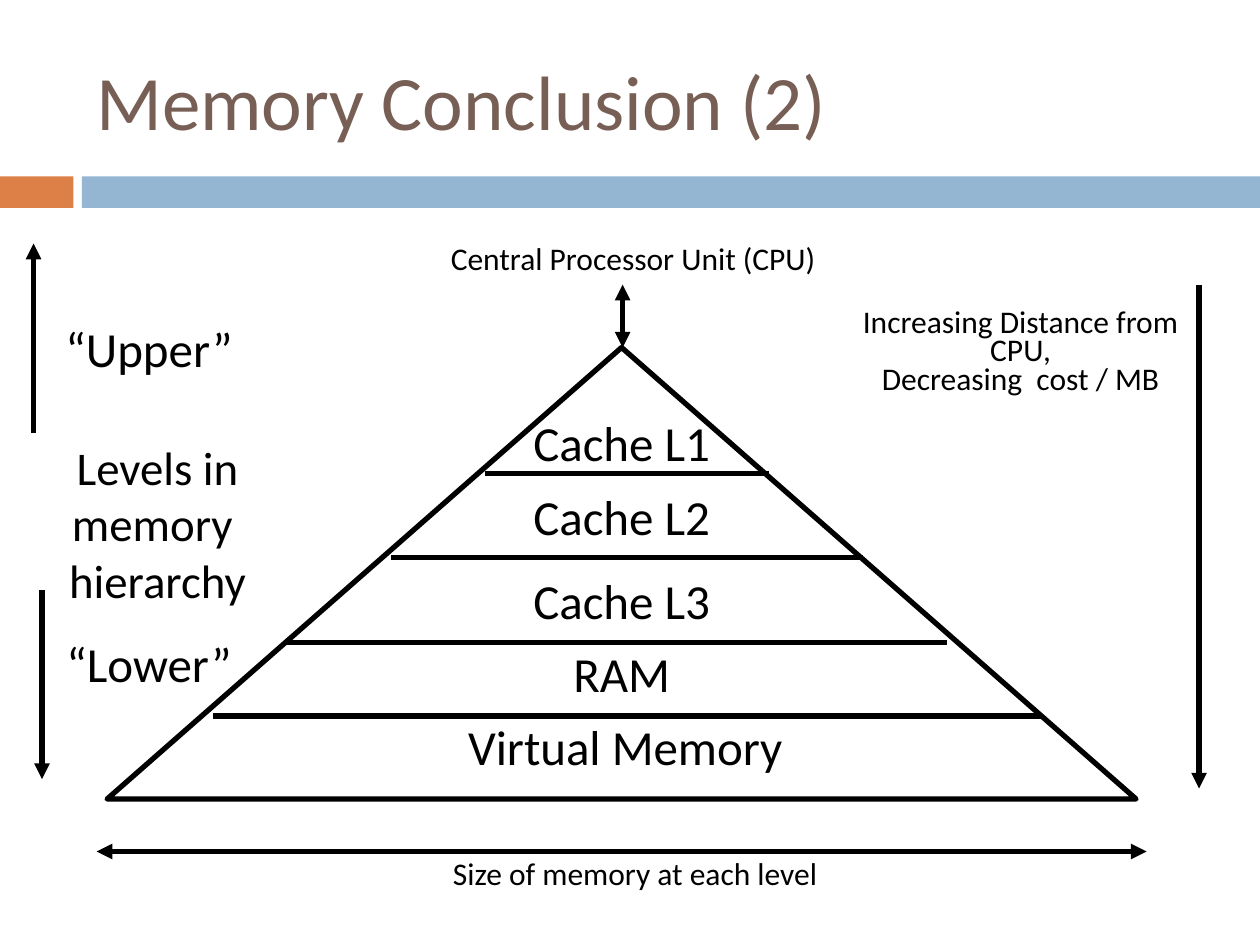
from lxml.etree import SubElement
from pptx import Presentation
from pptx.dml.color import RGBColor
from pptx.enum.shapes import MSO_CONNECTOR, MSO_SHAPE
from pptx.enum.text import MSO_ANCHOR, PP_ALIGN
from pptx.oxml.ns import qn
from pptx.util import Pt

PX = 7620  # 120 px to the inch
BLACK = "000000"


def add_label(place, text, size, color=BLACK, align=PP_ALIGN.CENTER,
              line_spacing=0.75, insets=(8, 4), anchor=MSO_ANCHOR.TOP):
    box = slide.shapes.add_textbox(*[value * PX for value in place])
    frame = box.text_frame
    frame.word_wrap = True
    frame.vertical_anchor = anchor
    frame.margin_left = frame.margin_right = insets[0] * PX
    frame.margin_top = frame.margin_bottom = insets[1] * PX
    paragraph = frame.paragraphs[0]
    paragraph.alignment = align
    paragraph.line_spacing = line_spacing
    for index, line in enumerate(text.split("\n")):
        if index:
            paragraph.add_line_break()
        run = paragraph.add_run()
        run.text = line
        run.font.name = "Calibri"
        run.font.size = Pt(size)
        run.font.color.rgb = RGBColor.from_string(color)


def add_line(start_x, start_y, end_x, end_y, arrowheads=()):
    connector = slide.shapes.add_connector(
        MSO_CONNECTOR.STRAIGHT,
        start_x * PX, start_y * PX, end_x * PX, end_y * PX)
    connector.line.width = Pt(3)
    connector.line.color.rgb = RGBColor.from_string(BLACK)
    properties = connector._element.spPr
    for end in arrowheads:
        SubElement(properties.find(qn("a:ln")), qn(f"a:{end}"), type="triangle")
    SubElement(properties, qn("a:effectLst"))


presentation = Presentation()
presentation.slide_width = 1200 * PX
presentation.slide_height = 900 * PX
slide = presentation.slides.add_slide(presentation.slide_layouts[6])

# Title and the two-coloured band under it
for left, width, color in [(0, 70, "DD8047"), (78, 1122, "94B6D2")]:
    band = slide.shapes.add_shape(
        MSO_SHAPE.RECTANGLE, left * PX, 168 * PX, width * PX, 30 * PX)
    band.shadow.inherit = False
    band.fill.solid()
    band.fill.fore_color.rgb = RGBColor.from_string(color)
    band.line.fill.background()
add_label((80, 30, 1070, 130), "Memory Conclusion (2)", 44, "775F55",
          PP_ALIGN.LEFT, 1, (12, 6), MSO_ANCHOR.MIDDLE)

# Pyramid
pyramid = slide.shapes.add_shape(
    MSO_SHAPE.ISOSCELES_TRIANGLE, 102 * PX, 331 * PX, 980 * PX, 430 * PX)
pyramid.shadow.inherit = False
pyramid.fill.background()
pyramid.line.width = Pt(3)
pyramid.line.color.rgb = RGBColor.from_string(BLACK)

# Memory levels: name, text top, divider below (left, right, y)
levels = [
    ("Cache L1", 402, 462, 732, 451),
    ("Cache L2", 472, 372, 822, 531),
    ("Cache L3", 552, 272, 902, 612),
    ("RAM", 622, 203, 992, 682),
]
for name, top, left, right, divider in levels:
    add_label((492, top, 200, 50), name, 28)
    add_line(left, divider, right, divider)
add_label((430, 691, 331, 50), "Virtual Memory", 28)

# Processor above the pyramid
add_label((83, 232, 1040, 54), "Central Processor Unit (CPU)", 18)
add_line(593, 331, 593, 271, ("headEnd", "tailEnd"))

# Size axis below the pyramid
add_label((10, 818, 1190, 34), "Size of memory at each level", 18)
add_line(92, 811, 1092, 811, ("headEnd", "tailEnd"))

# Distance and cost axis on the right
add_label((812, 292, 320, 246),
          "Increasing Distance from CPU,\nDecreasing  cost / MB", 18)
add_line(1142, 271, 1142, 751, ("tailEnd",))

# Hierarchy axis on the left
add_label((42, 312, 200, 50), "“Upper”", 28)
add_label((10, 412, 280, 150), "Levels in memory  hierarchy", 26.8,
          line_spacing=1, insets=(12, 6))
add_label((2, 612, 280, 50), "“Lower”", 28)
add_line(32, 232, 32, 412, ("headEnd",))
add_line(40, 562, 40, 742, ("tailEnd",))

presentation.save("out.pptx")
